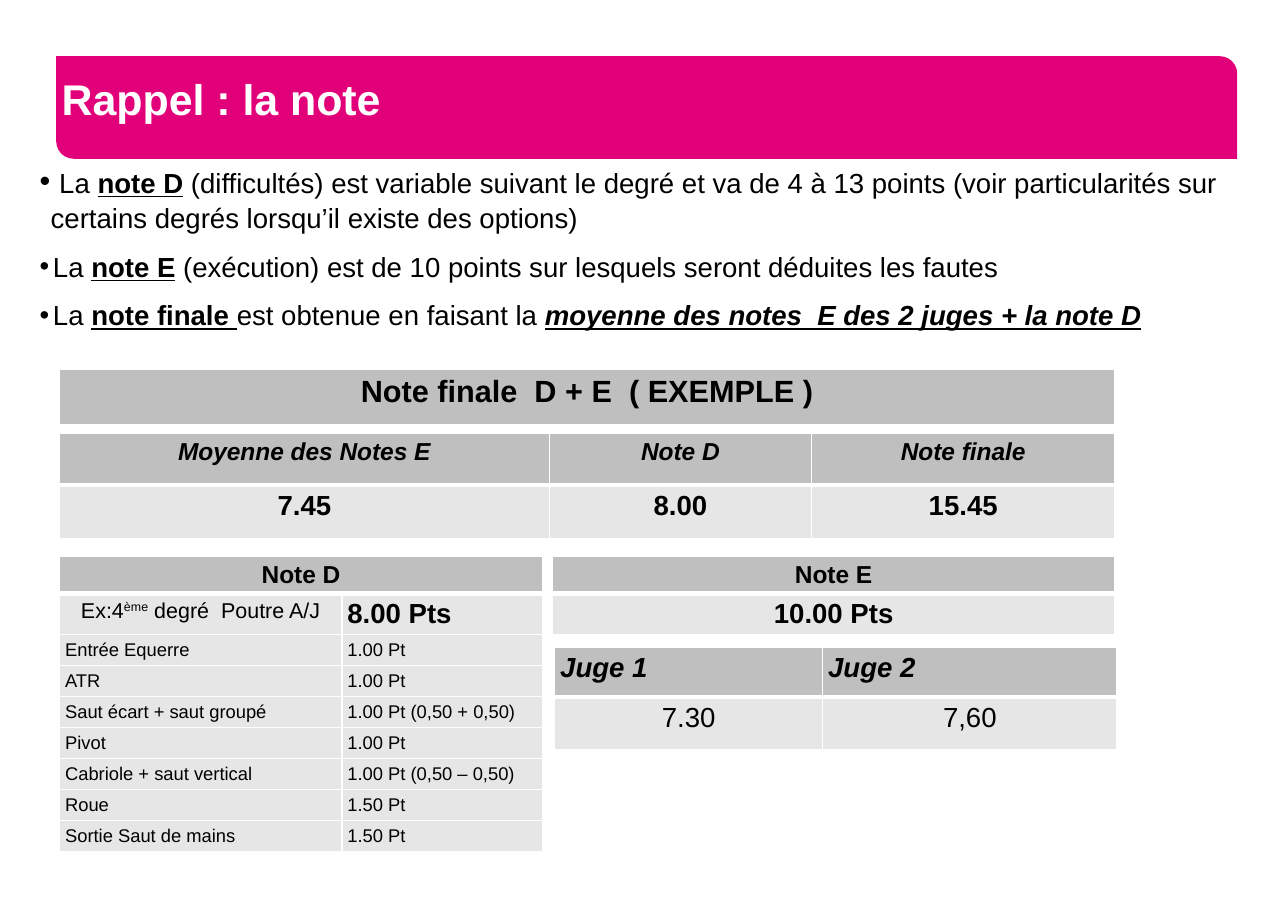
from lxml import etree
from pptx import Presentation
from pptx import util as u
from pptx.dml.color import RGBColor
from pptx.enum import shapes, text
from pptx.oxml import ns

PINK = RGBColor(0xE2, 0x00, 0x7A)
WHITE = RGBColor(0xFF, 0xFF, 0xFF)
BLACK = RGBColor(0, 0, 0)
HEADER_GREY = RGBColor(0xBF, 0xBF, 0xBF)
BODY_GREY = RGBColor(0xE6, 0xE6, 0xE6)
LEFT, CENTER = text.PP_ALIGN.LEFT, text.PP_ALIGN.CENTER


def format_font(font, size, color=BLACK, bold=False, italic=False):
    font.name, font.size, font.bold, font.italic = "Arial", u.Pt(size), bold, italic
    font.color.rgb = color


def add_grid(left, top, widths, rows):
    """Each row is height, size, bold, italic, alignment, texts; the first is the header."""
    height = sum(row[0] for row in rows)
    table = slide.shapes.add_table(
        len(rows), len(widths), u.Inches(left), u.Inches(top),
        u.Inches(sum(widths)), u.Inches(height)).table
    table.first_row = table.horz_banding = False
    for column, width in zip(table.columns, widths):
        column.width = u.Inches(width)
    for index, (height, size, bold, italic, alignment, texts) in enumerate(rows):
        table.rows[index].height = u.Inches(height)
        for cell, label in zip(table.rows[index].cells, texts):
            cell.margin_left = cell.margin_right = u.Inches(0.05)
            cell.margin_top = cell.margin_bottom = u.Pt(3.4)
            paragraph = cell.text_frame.paragraphs[0]
            paragraph.alignment = alignment
            format_font(paragraph.font, size, BLACK, bold, italic)
            if label:
                paragraph.add_run().text = label
            # White borders, thick between header and body
            properties = cell._tc.get_or_add_tcPr()
            for side in ("lnL", "lnR", "lnT", "lnB"):
                thick = (index, side) in ((0, "lnB"), (1, "lnT"))
                line = etree.SubElement(properties, ns.qn("a:" + side),
                                        w=str(u.Pt(3 if thick else 1)))
                line_fill = etree.SubElement(line, ns.qn("a:solidFill"))
                etree.SubElement(line_fill, ns.qn("a:srgbClr"), val=str(WHITE))
            cell.fill.solid()
            cell.fill.fore_color.rgb = BODY_GREY if index else HEADER_GREY
    return table


presentation = Presentation()
presentation.slide_width, presentation.slide_height = u.Inches(11.68), u.Inches(8.26)
slide = presentation.slides.add_slide(presentation.slide_layouts[1])
title, body = slide.shapes.title, slide.placeholders[1]

# Banner behind the title
banner_box = [u.Inches(length) for length in (0.51, 0.51, 10.71, 0.93)]
banner = slide.shapes.add_shape(shapes.MSO_SHAPE.ROUND_2_DIAG_RECTANGLE, *banner_box)
banner.adjustments[0], banner.adjustments[1] = 0, 0.17
banner.shadow.inherit = False
banner.fill.solid()
banner.fill.fore_color.rgb = PINK
banner.line.fill.background()
title._element.addprevious(banner._element)

# Title
title.left, title.top, title.width, title.height = banner_box
frame = title.text_frame
frame.text = "Rappel : la note"
frame.auto_size = text.MSO_AUTO_SIZE.NONE
frame.vertical_anchor = text.MSO_ANCHOR.MIDDLE
frame.margin_left = frame.margin_right = u.Inches(0.05)
frame.margin_top = frame.margin_bottom = u.Inches(0.05)
paragraph = frame.paragraphs[0]
paragraph.alignment = LEFT
paragraph.line_spacing = u.Pt(22)
format_font(paragraph.font, 28, WHITE, bold=True)

# Bullets: left margin, hanging indent, then runs with b, i, u marks
bullets = [
    (0.3, -0.1, [(" ", ""), ("La ", ""), ("note D", "bu"),
                 (" (difficultés) est variable suivant le degré et va de 4 à 13 points "
                  "(voir particularités sur certains degrés lorsqu’il existe des options)", "")]),
    (0.32, -0.12, [("La ", ""), ("note E", "bu"),
                   (" (exécution) est de 10 points sur lesquels seront déduites les fautes", "")]),
    (0.32, -0.12, [("La ", ""), ("note finale ", "bu"), ("est obtenue en faisant la ", ""),
                   ("moyenne des notes  E des 2 juges + la note D", "biu")]),
]
body.left, body.top = u.Inches(0.16), u.Inches(1.46)
body.width, body.height = u.Inches(11.21), u.Inches(6.46)
frame = body.text_frame
frame.auto_size = text.MSO_AUTO_SIZE.NONE
frame.margin_left = frame.margin_right = frame.margin_top = frame.margin_bottom = 0
for index, (margin, indent, runs) in enumerate(bullets):
    paragraph = frame.add_paragraph() if index else frame.paragraphs[0]
    paragraph.level = 1
    paragraph.line_spacing = 1.05
    paragraph.space_before = u.Pt(9 if index else 0)
    properties = paragraph._p.get_or_add_pPr()
    properties.set("marL", str(u.Inches(margin)))
    properties.set("indent", str(u.Inches(indent)))
    etree.SubElement(properties, ns.qn("a:buFont"), typeface="Arial")
    etree.SubElement(properties, ns.qn("a:buChar"), char="•")
    format_font(paragraph.font, 18)
    for words, marks in runs:
        run = paragraph.add_run()
        run.text = words
        if marks:
            run.font.bold, run.font.underline = True, True
            run.font.italic = "i" in marks
frame.paragraphs[0].runs[0].font.size = u.Pt(20)

# Final mark
add_grid(0.54, 3.35, [9.57], [
    (0.51, 20, True, False, CENTER, ["Note finale  D + E  ( EXEMPLE )"])])
add_grid(0.54, 3.93, [4.44, 2.38, 2.75], [
    (0.47, 16, True, True, CENTER, ["Moyenne des Notes E", "Note D", "Note finale"]),
    (0.48, 18, True, False, CENTER, ["7.45", "8.00", "15.45"])])

# Difficulty mark
elements = [
    ("Entrée Equerre", "1.00 Pt"),
    ("ATR", "1.00 Pt"),
    ("Saut écart + saut groupé", "1.00 Pt (0,50 + 0,50)"),
    ("Pivot", "1.00 Pt"),
    ("Cabriole + saut vertical", "1.00 Pt (0,50 – 0,50)"),
    ("Roue", "1.50 Pt"),
    ("Sortie Saut de mains", "1.50 Pt"),
]
difficulty = add_grid(0.54, 5.04, [2.56, 1.82], [
    (0.34, 16, True, False, CENTER, ["Note D", ""]),
    (0.37, 18, True, False, LEFT, ["", "8.00 Pts"]),
    *[(0.28, 12, False, False, LEFT, element) for element in elements]])
difficulty.cell(0, 0).merge(difficulty.cell(0, 1))
paragraph = difficulty.cell(1, 0).text_frame.paragraphs[0]
paragraph.alignment = CENTER
format_font(paragraph.font, 14)
for words in ("Ex:4", "ème", " degré  Poutre A/J"):
    paragraph.add_run().text = words
paragraph.runs[1]._r.get_or_add_rPr().set("baseline", "30000")

# Execution mark and judges
add_grid(5.01, 5.04, [5.1], [
    (0.34, 16, True, False, CENTER, ["Note E"]),
    (0.37, 18, True, False, CENTER, ["10.00 Pts"])])
add_grid(5.03, 5.87, [2.43, 2.67], [
    (0.45, 18, True, True, LEFT, ["Juge 1", "Juge 2"]),
    (0.48, 18, False, False, CENTER, ["7.30", "7,60"])])

presentation.save("out.pptx")
